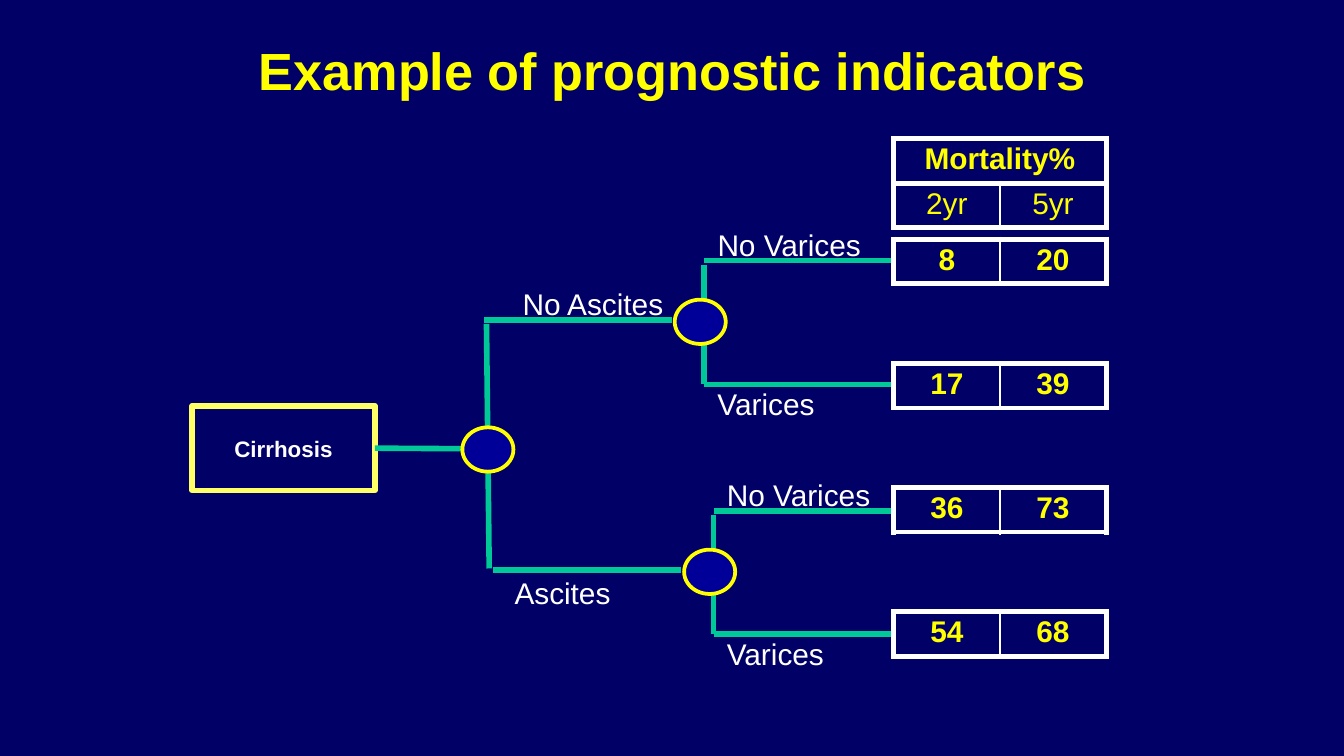
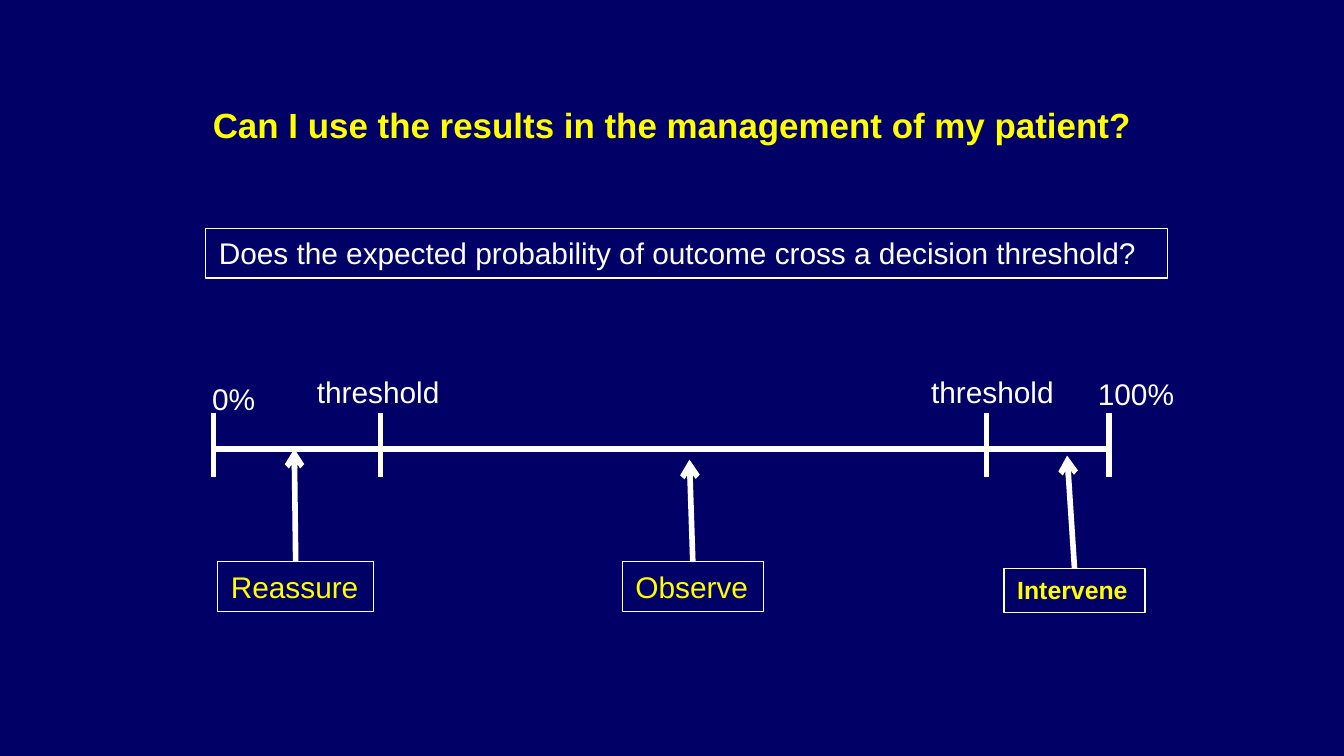
from pptx import Presentation
from pptx.dml.color import RGBColor as Rgb
from pptx.enum.shapes import MSO_CONNECTOR as Link, MSO_SHAPE as Form
from pptx.enum.text import MSO_ANCHOR as Anchor, MSO_AUTO_SIZE as Fit, PP_ALIGN as Align
from pptx.oxml.ns import qn
from pptx.util import Inches, Pt
from lxml.etree import SubElement as Sub

NAVY, BLUE, GREEN = "000066", "000099", "00C896"
WHITE, YELLOW, PALE = "FFFFFF", "FFFF00", "FFFF66"
LEFT, MID = Align.LEFT, Align.CENTER
COLS, ROWS = 100, 56.25


def tint(code):
    return Rgb.from_string(code)


def put(item, values):
    for key, value in values.items():
        setattr(item, key, value)


class Deck:
    """Draws styled elements on a grid of tenths of an inch."""

    def __init__(self):
        self.show = Presentation()
        self.cell = Inches(0.1)
        put(self.show, {"slide_width": self.at(COLS), "slide_height": self.at(ROWS)})

    def at(self, count):
        return round(count * self.cell)

    def spot(self, *counts):
        return [self.at(count) for count in counts]

    def page(self, text, box, size):
        self.slide = self.show.slides.add_slide(self.show.slide_layouts[6])
        fill = self.slide.background.fill
        fill.solid()
        fill.fore_color.rgb = tint(NAVY)
        self.note(text, box, size, YELLOW, True, MID, Anchor.MIDDLE, True)

    def word(self, frame, text, size, color, bold=False, align=LEFT):
        para = frame.paragraphs[0]
        para.alignment = align
        run = para.add_run()
        run.text = text
        put(run.font, {"name": "Arial", "size": Pt(size), "bold": bold})
        run.font.color.rgb = tint(color)

    def lay(self, shape, text, size, color, bold, align, anchor, wrap):
        frame = shape.text_frame
        put(frame, {"word_wrap": wrap, "vertical_anchor": anchor,
                    "auto_size": Fit.NONE if wrap else Fit.SHAPE_TO_FIT_TEXT})
        self.word(frame, text, size, color, bold, align)

    def note(self, text, box, size=16, color=WHITE, bold=False,
             align=LEFT, anchor=Anchor.TOP, wrap=False):
        shape = self.slide.shapes.add_textbox(*self.spot(*box))
        self.lay(shape, text, size, color, bold, align, anchor, wrap)

    def form(self, kind, box, color, width, fill=None):
        shape = self.slide.shapes.add_shape(kind, *self.spot(*box))
        shape.shadow.inherit = False
        if fill:
            shape.fill.solid()
            shape.fill.fore_color.rgb = tint(fill)
        else:
            shape.fill.background()
        shape.line.color.rgb = tint(color)
        shape.line.width = Pt(width)
        return shape

    def box(self, text, box, size=16, color=YELLOW, bold=False, align=LEFT,
            anchor=Anchor.TOP, wrap=False, edge=WHITE, width=0.75):
        shape = self.form(Form.RECTANGLE, box, edge, width)
        self.lay(shape, text, size, color, bold, align, anchor, wrap)
        return shape

    def hub(self, left, top):
        self.form(Form.FLOWCHART_CONNECTOR, (left, top, 3.8, 3.3), YELLOW, 2, BLUE)

    def line(self, start, end, color=GREEN, root=None, side=3, arrow=False):
        link = self.slide.shapes.add_connector(
            Link.STRAIGHT, *self.spot(*start, *end))
        if root is not None:
            link.begin_connect(root, side)
        link.line.color.rgb = tint(color)
        link.line.width = Pt(3)
        props = link.element.spPr
        if arrow:
            Sub(props.find(qn("a:ln")), qn("a:tailEnd"), type="arrow")
        Sub(props, qn("a:effectLst"))

    def fork(self, left, top):
        low = top + 9.2
        self.line((left, top + 0.3), (left, low))
        for row in (top, low):
            self.line((left, row), (66.4, row))
        self.note("No Varices", (left, top - 3, 12.8, 3.7))
        self.note("Varices", (left, low - 0.4, 9.3, 3.7))
        self.hub(left - 2.2, top + 2.9)

    def edge(self, cell, widths):
        props = cell._tc.get_or_add_tcPr()
        for place, (side, width) in enumerate(widths.items()):
            line = Sub(props, qn("a:ln" + side), w=str(Pt(width)))
            props.remove(line)
            props.insert(place, line)
            fill = Sub(line, qn("a:solidFill"))
            Sub(fill, qn("a:srgbClr"), val=WHITE)

    def grid(self, left, top, rows, head=False):
        size = self.spot(left, top, 15.8, 3.33 * len(rows))
        table = self.slide.shapes.add_table(len(rows), 2, *size).table
        put(table, {"first_row": False, "horz_banding": False})
        pad = {"margin_left": self.at(0.7), "margin_right": self.at(0.7),
               "margin_top": self.at(0.3), "margin_bottom": self.at(0.3)}
        for row, texts in enumerate(rows):
            wide = len(texts) == 1
            for col in range(2):
                cell = table.cell(row, col)
                put(cell, pad)
                cell.fill.background()
                inner = 3 if wide else 1
                self.edge(cell, {"L": inner if col else 3,
                                 "R": 3 if col else inner, "T": 3, "B": 3})
            if wide:
                table.cell(row, 0).merge(table.cell(row, 1))
            for col, text in enumerate(texts):
                self.word(table.cell(row, col).text_frame, text, 16, YELLOW,
                          wide or not head, MID)


def tree(deck):
    deck.page("Example of prognostic indicators", (18.1, 1.8, 63.8, 6.7), 28)
    root = deck.box("Cirrhosis", (14.3, 30.2, 13.6, 6.3), 12, WHITE, True, MID,
                    Anchor.MIDDLE, True, PALE, 3)
    deck.line((27.9, 33.4), (36.2, 33.4), root=root)
    deck.line((36.2, 24.1), (36.4, 42.3))
    deck.line((36, 23.8), (50, 23.8))
    deck.line((36.7, 42.4), (50.7, 42.4))
    deck.note("No Ascites", (37.9, 20.8, 12.6, 3.7))
    deck.note("Ascites", (37.3, 42.3, 9.2, 3.7))
    deck.hub(34.4, 31.8)
    deck.fork(52.4, 19.4)
    deck.fork(53.1, 38)
    deck.grid(66.5, 10.3, [["Mortality%"], ["2yr", "5yr"]], True)
    rates = [("8", "20"), ("17", "39"), ("36", "73"), ("54", "68")]
    for step, pair in enumerate(rates):
        deck.grid(66.5, 17.8 + 9.23 * step, [pair])


def scale(deck):
    deck.page("Can I use the results in the management of my patient?",
              (12.5, 6.1, 75, 6.4), 18.7)
    deck.box("Does the expected probability of outcome cross a decision threshold?",
             (15.3, 17, 71.6, 3.7), color=WHITE, wrap=True)
    deck.line((15.9, 33.4), (82.5, 33.4), WHITE)
    marks = [("0%", 15.9, 14.8, 27.8, 5.3), ("threshold", 28.3, 22.6, 27.3, 11.2),
             ("threshold", 73.4, 68.3, 27.3, 11.2), ("100%", 82.5, 80.7, 27.5, 7.8)]
    for text, tick, left, top, width in marks:
        deck.line((tick, 30.7), (tick, 35.5), WHITE)
        deck.note(text, (left, top, width, 3.7))
    acts = [("Reassure", (16.2, 41.8, 11.6, 3.7), (21.9, 33.4), {}),
            ("Observe", (46.3, 41.8, 10.5, 3.7), (51.3, 34.2), {}),
            ("Intervene", (74.7, 42.3, 10.5, 3.3), (79.4, 33.9),
             {"size": 13.3, "bold": True, "wrap": True})]
    for text, place, tip, style in acts:
        root = deck.box(text, place, **style)
        deck.line(place[:2], tip, WHITE, root, 0, True)


def main():
    deck = Deck()
    tree(deck)
    scale(deck)
    deck.show.save("out.pptx")


if __name__ == "__main__":
    main()
